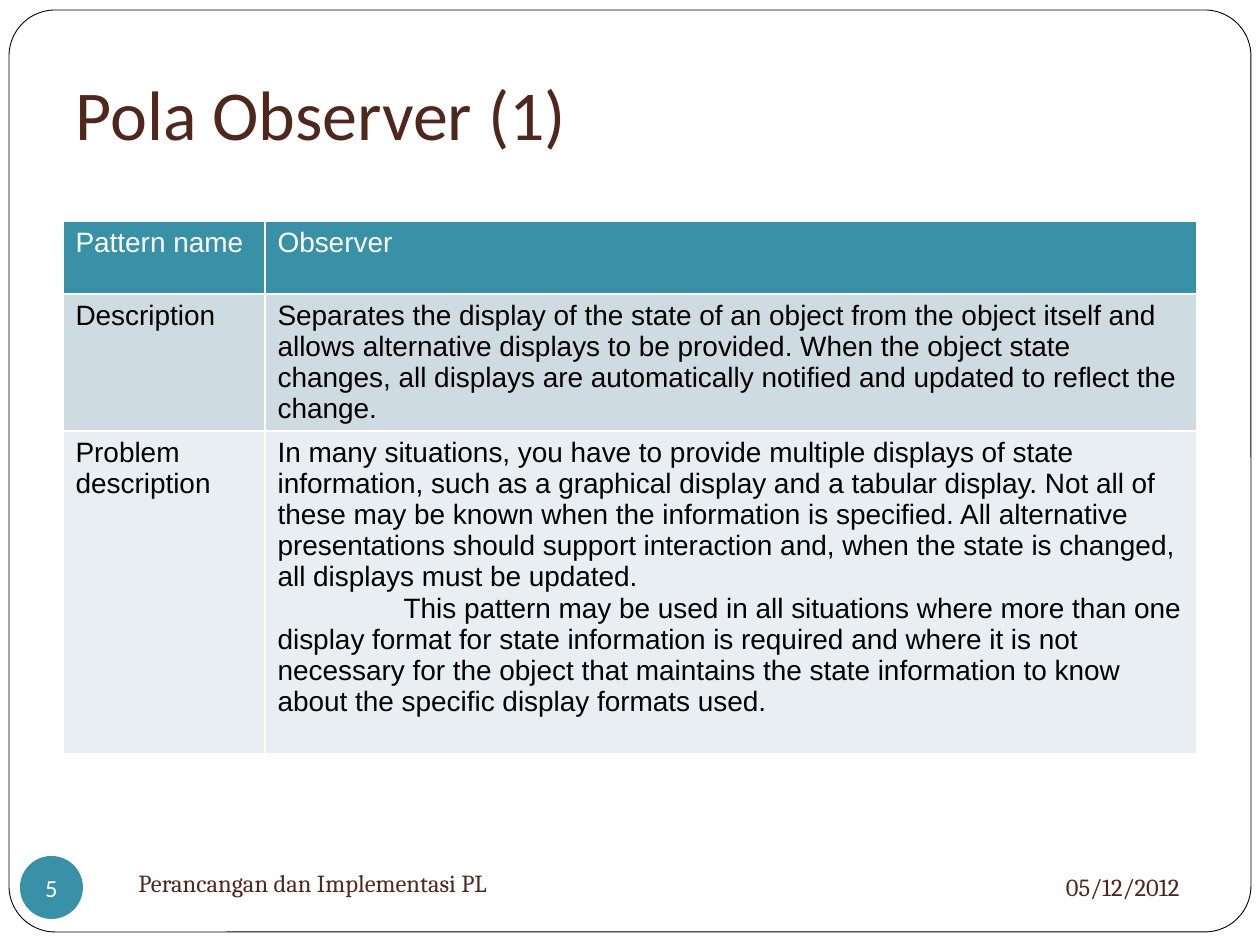
from dataclasses import dataclass

from lxml.etree import SubElement
from pptx import Presentation
from pptx.dml.color import RGBColor as Rgb
from pptx.enum.shapes import MSO_SHAPE as Shape
from pptx.enum.text import MSO_ANCHOR as Anchor, MSO_AUTO_SIZE as AutoSize, PP_ALIGN as Align
from pptx.oxml.ns import qn
from pptx.util import Emu, Pt

SCALE = 914400 / 126


@dataclass(frozen=True)
class Theme:
    """Colours, fonts and type sizes of the slide."""
    white: str = "FFFFFF"
    black: str = "000000"
    brown: str = "4F271C"
    teal: str = "3891A7"
    band_dark: str = "CEDCE1"
    band_light: str = "E8EEF1"
    title_font: str = "Calibri"
    table_font: str = "Arial"
    footer_font: str = "Cambria"
    title_size: int = 40
    table_size: int = 16
    footer_size: int = 14


THEME = Theme()

PATTERN_ROWS = [
    (73, THEME.teal, THEME.white, "Pattern name", "Observer"),
    (137, THEME.band_dark, THEME.black, "Description",
     "Separates the display of the state of an object from the object itself and allows "
     "alternative displays to be provided. When the object state changes, all displays are "
     "automatically notified and updated to reflect the change."),
    (323, THEME.band_light, THEME.black, "Problem description",
     "In many situations, you have to provide multiple displays of state information, such as "
     "a graphical display and a tabular display. Not all of these may be known when the "
     "information is specified. All alternative presentations should support interaction and, "
     "when the state is changed, all displays must be updated.\n"
     "This pattern may be used in all situations where more than one display format for state "
     "information is required and where it is not necessary for the object that maintains the "
     "state information to know about the specific display formats used."),
]


def px(length):
    """Turn pixels into EMU."""
    return Emu(round(length * SCALE))


def place(box):
    """Turn a pixel box into EMU lengths."""
    return [px(length) for length in box]


def write(frame, text, font, size, color, align=Align.LEFT):
    """Set the text of a frame and format its runs."""
    frame.text = text
    for para in frame.paragraphs:
        para.alignment = align
        for span in para.runs:
            span.font.name = font
            span.font.size = Pt(size)
            span.font.bold = False
            span.font.color.rgb = Rgb.from_string(color)


def add_frame(page, box):
    """Draw the rounded outline around the page."""
    frame = page.shapes.add_shape(Shape.ROUNDED_RECTANGLE, *place(box))
    frame.adjustments[0] = 0.05
    frame.shadow.inherit = False
    frame.fill.solid()
    frame.fill.fore_color.rgb = Rgb.from_string(THEME.white)
    frame.line.color.rgb = Rgb.from_string(THEME.black)
    frame.line.width = Pt(0.5)
    page.shapes._spTree.insert(2, frame._element)


def set_title(page, box, text):
    """Move the title placeholder and fill it."""
    title = page.shapes.title
    title.left, title.top, title.width, title.height = place(box)
    frame = title.text_frame
    frame.auto_size = AutoSize.NONE
    frame.vertical_anchor = Anchor.BOTTOM
    frame.margin_bottom = px(13)
    write(frame, text, THEME.title_font, THEME.title_size, THEME.brown)


def add_borders(cell):
    """Give a cell thin white borders on all sides."""
    properties = cell._tc.get_or_add_tcPr()
    for side in ("a:lnL", "a:lnR", "a:lnT", "a:lnB"):
        line = SubElement(properties, qn(side), w=str(Pt(1)))
        SubElement(SubElement(line, qn("a:solidFill")), qn("a:srgbClr"), val=THEME.white)


def add_pattern_table(page, box, label_width, rows):
    """Build the table with a label column and a text column."""
    table = page.shapes.add_table(len(rows), 2, *place(box)).table
    table.columns[0].width = px(label_width)
    table.columns[1].width = px(box[2] - label_width)
    for index, (height, fill, color, *texts) in enumerate(rows):
        table.rows[index].height = px(height)
        for cell, text in zip(table.rows[index].cells, texts):
            add_borders(cell)
            cell.fill.solid()
            cell.fill.fore_color.rgb = Rgb.from_string(fill)
            write(cell.text_frame, text, THEME.table_font, THEME.table_size, color)
            for para in cell.text_frame.paragraphs[1:]:
                para._p.get_or_add_pPr().set("indent", str(px(126)))


def add_footer_text(page, box, text, align):
    """Add one line of footer text."""
    frame = page.shapes.add_textbox(*place(box)).text_frame
    frame.word_wrap = True
    frame.vertical_anchor = Anchor.MIDDLE
    write(frame, text, THEME.footer_font, THEME.footer_size, THEME.brown, align)


def add_page_number(page, box, number):
    """Draw the round page number badge."""
    badge = page.shapes.add_shape(Shape.OVAL, *place(box))
    badge.shadow.inherit = False
    badge.fill.solid()
    badge.fill.fore_color.rgb = Rgb.from_string(THEME.teal)
    badge.line.fill.background()
    frame = badge.text_frame
    frame.margin_left = frame.margin_right = frame.margin_top = frame.margin_bottom = 0
    frame.word_wrap = False
    frame.vertical_anchor = Anchor.MIDDLE
    write(frame, number, THEME.title_font, THEME.footer_size, THEME.white, Align.CENTER)


def add_footer(page, box):
    """Place the badge, course name and date along the footer."""
    left, top, width, height = box
    add_page_number(page, (left, top + 5, 63, 63), "5")
    add_footer_text(page, (left + 106, top, 546, 63), "Perancangan dan Implementasi PL", Align.LEFT)
    add_footer_text(page, (left + width - 341, top + 3, 341, 65), "05/12/2012", Align.RIGHT)


def main():
    """Build and save the deck."""
    deck = Presentation()
    deck.slide_width, deck.slide_height = px(1260), px(945)
    page = deck.slides.add_slide(deck.slide_layouts[5])
    add_frame(page, (9, 10, 1242, 922))
    set_title(page, (63, 10, 1134, 158), "Pola Observer (1)")
    table_height = sum(row[0] for row in PATTERN_ROWS)
    add_pattern_table(page, (63, 221, 1134, table_height), 202, PATTERN_ROWS)
    add_footer(page, (20, 851, 1172, 68))
    deck.save("out.pptx")


if __name__ == "__main__":
    main()
